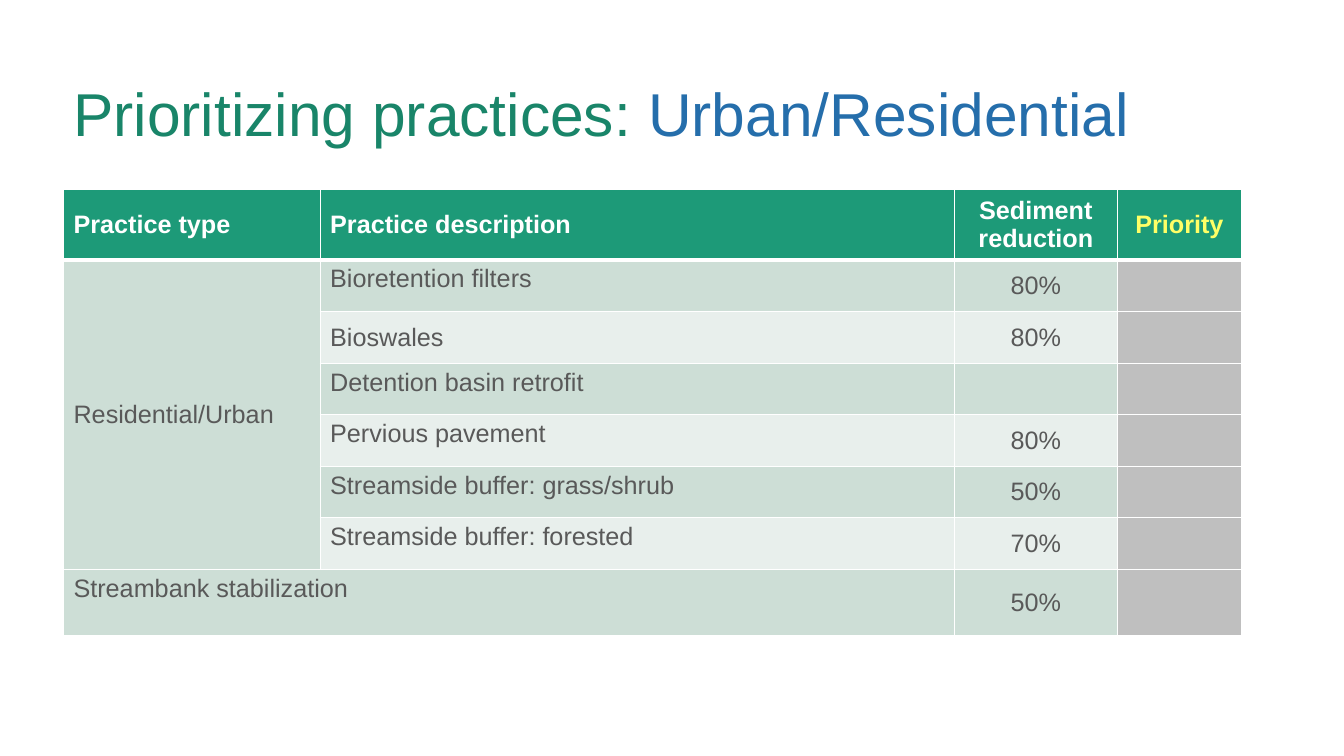
"""Build the slide on prioritizing urban and residential practices."""
from lxml import etree
from pptx import Presentation
from pptx import util as u
from pptx.dml.color import RGBColor
from pptx.enum import text
from pptx.oxml.ns import qn

TITLE = [("Prioritizing practices: ", "198569"), ("Urban/Residential", "256EAB")]
HEADINGS = ["Practice type", "Practice description", "Sediment reduction", "Priority"]
PRACTICES = [
    ("Residential/Urban", "Bioretention filters", "80%"),
    ("", "Bioswales", "80%"),
    ("", "Detention basin retrofit", ""),
    ("", "Pervious pavement", "80%"),
    ("", "Streamside buffer: grass/shrub", "50%"),
    ("", "Streamside buffer: forested", "70%"),
    ("Streambank stabilization", "", "50%"),
]
MIDDLE_LABELS = {"Residential/Urban", "Bioswales"}
COLUMN_WIDTHS = [183.3, 453, 116.6, 88.6]
TALL, LOW = 47.1, 36.85
ROW_HEIGHTS = [TALL] + [LOW] * 6 + [TALL]
LEFT, TABLE_TOP = 45.36, 135.36
GREEN, BANDS, GREY = "1D9A78", ("E8EFEC", "CDDED6"), "BFBFBF"
WHITE, YELLOW, INK = "FFFFFF", "FFFF66", "595959"


def color(hex_code):
    return RGBColor.from_string(hex_code)


def write(paragraph, words, size=18, ink=INK, bold=False, align=text.PP_ALIGN.LEFT):
    paragraph.alignment = align
    run = paragraph.add_run()
    run.text = words
    run.font.name, run.font.size, run.font.bold = "Arial", u.Pt(size), bold
    run.font.color.rgb = color(ink)


def outline(cell, top=1, bottom=1):
    edges = {"a:lnL": 1, "a:lnR": 1, "a:lnT": top, "a:lnB": bottom}
    properties = cell._tc.get_or_add_tcPr()
    for place, (edge, width) in enumerate(edges.items()):
        line = etree.Element(qn(edge), w=str(u.Pt(width)))
        solid = etree.SubElement(line, qn("a:solidFill"))
        etree.SubElement(solid, qn("a:srgbClr"), val=WHITE)
        properties.insert(place, line)


def add_title(slide):
    frame = slide.shapes.add_textbox(u.Pt(LEFT), u.Pt(31), u.Pt(828), u.Pt(104.4)).text_frame
    frame.word_wrap = True
    frame.vertical_anchor = text.MSO_ANCHOR.MIDDLE
    frame.paragraphs[0].line_spacing = 0.9
    for words, ink in TITLE:
        write(frame.paragraphs[0], words, size=43.2, ink=ink)


def add_practices(slide):
    rows = [HEADINGS] + [practice + ("",) for practice in PRACTICES]
    table = slide.shapes.add_table(
        len(rows), len(HEADINGS), u.Pt(LEFT), u.Pt(TABLE_TOP),
        u.Pt(sum(COLUMN_WIDTHS)), u.Pt(sum(ROW_HEIGHTS))).table
    for column, width in zip(table.columns, COLUMN_WIDTHS):
        column.width = u.Pt(width)
    for row, height in zip(table.rows, ROW_HEIGHTS):
        row.height = u.Pt(height)
    table.cell(1, 0).merge(table.cell(6, 0))
    table.cell(7, 0).merge(table.cell(7, 1))

    for r, row in enumerate(rows):
        for c, words in enumerate(row):
            cell = table.cell(r, c)
            header = r == 0
            middle = header or c > 1 or words in MIDDLE_LABELS
            cell.vertical_anchor = text.MSO_ANCHOR.MIDDLE if middle else text.MSO_ANCHOR.TOP
            cell.fill.solid()
            band = GREY if c == 3 else BANDS[r % 2]
            cell.fill.fore_color.rgb = color(GREEN if header else band)
            outline(cell, top=3 if r == 1 else 1, bottom=3 if header else 1)
            if words:
                ink = (YELLOW if c == 3 else WHITE) if header else INK
                align = text.PP_ALIGN.CENTER if c > 1 else text.PP_ALIGN.LEFT
                write(cell.text_frame.paragraphs[0], words, ink=ink, bold=header, align=align)


def main():
    deck = Presentation()
    deck.slide_width, deck.slide_height = u.Pt(960), u.Pt(540)
    slide = deck.slides.add_slide(deck.slide_layouts[6])
    add_title(slide)
    add_practices(slide)
    deck.save("out.pptx")


if __name__ == "__main__":
    main()
